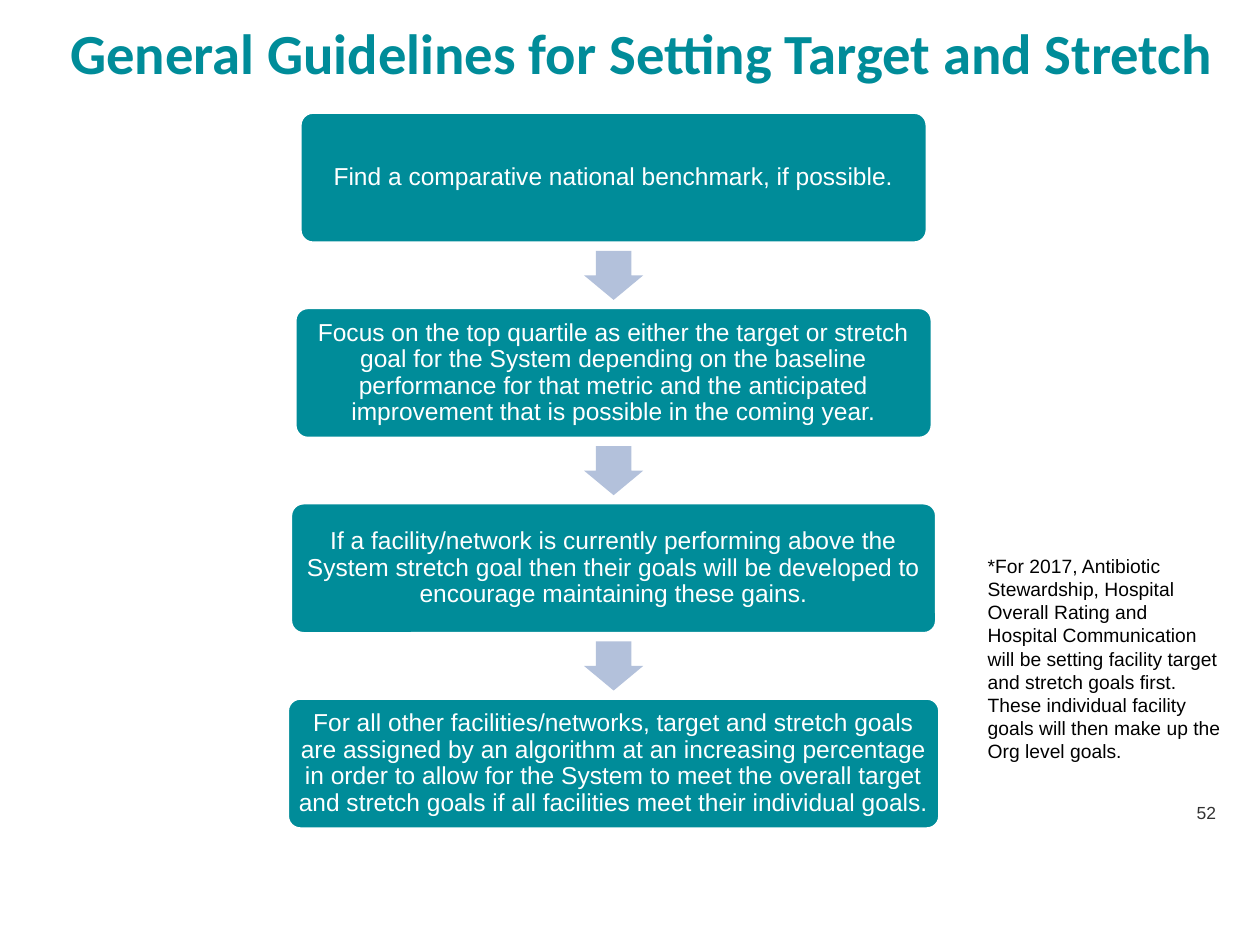
import dataclasses

import pptx
import pptx.dml.color
import pptx.enum.shapes
import pptx.enum.text
import pptx.util

Inches = pptx.util.Inches
Shape = pptx.enum.shapes.MSO_SHAPE
Align = pptx.enum.text.PP_ALIGN
Anchor = pptx.enum.text.MSO_ANCHOR


@dataclasses.dataclass(frozen=True)
class Theme:
    teal: str = "008C99"
    arrow: str = "B3C1DB"
    white: str = "FFFFFF"
    black: str = "000000"
    grey: str = "333333"
    heading_font: str = "Calibri"
    body_font: str = "Arial"
    title_size: float = 32.4
    step_size: float = 14
    note_size: float = 11
    number_size: float = 10


THEME = Theme()

TITLE = "General Guidelines for Setting Target and Stretch"
STEPS = [
    (4.98, "Find a comparative national benchmark, if possible."),
    (5.06, "Focus on the top quartile as either the target or stretch goal for "
           "the System depending on the baseline performance for that metric and "
           "the anticipated improvement that is possible in the coming year."),
    (5.13, "If a facility/network is currently performing above the System stretch "
           "goal then their goals will be developed to encourage maintaining these "
           "gains."),
    (5.18, "For all other facilities/networks, target and stretch goals are assigned "
           "by an algorithm at an increasing percentage in order to allow for the "
           "System to meet the overall target and stretch goals if all facilities "
           "meet their individual goals."),
]
NOTE = ("*For 2017, Antibiotic Stewardship, Hospital Overall Rating and Hospital "
        "Communication will be setting facility target and stretch goals first. "
        "These individual facility goals will then make up the Org level goals.")

FLOW_CENTER = 4.87
FLOW_TOP = 0.89
STEP_HEIGHT = 1.04
STEP_PITCH = 1.55
ARROW_LENGTH = 0.39
ARROW_BREADTH = 0.47


def rgb(color):
    return pptx.dml.color.RGBColor.from_string(color)


def write(frame, text, color, align=Align.LEFT, **font_format):
    frame.word_wrap = True
    paragraph = frame.paragraphs[0]
    paragraph.text = text
    paragraph.alignment = align
    for name, value in font_format.items():
        setattr(paragraph.font, name, value)
    paragraph.font.color.rgb = rgb(color)
    return paragraph


def add_text(slide, left, top, width, height, text, color, **text_format):
    box = slide.shapes.add_textbox(*map(Inches, (left, top, width, height)))
    write(box.text_frame, text, color, **text_format)


def add_filled(slide, preset, left, top, width, height, color, adjustments):
    shape = slide.shapes.add_shape(preset, *map(Inches, (left, top, width, height)))
    shape.shadow.inherit = False
    shape.fill.solid()
    shape.fill.fore_color.rgb = rgb(color)
    for index, value in enumerate(adjustments):
        shape.adjustments[index] = value
    return shape


def add_step(slide, top, width, text):
    step = add_filled(slide, Shape.ROUNDED_RECTANGLE, FLOW_CENTER - width / 2, top,
                      width, STEP_HEIGHT, THEME.teal, [0.1])
    step.line.color.rgb = rgb(THEME.white)
    step.line.width = pptx.util.Pt(2)
    frame = step.text_frame
    frame.vertical_anchor = Anchor.MIDDLE
    for side in ("left", "right", "top", "bottom"):
        setattr(frame, f"margin_{side}", Inches(0.05))
    paragraph = write(frame, text, THEME.white, Align.CENTER, name=THEME.body_font,
                      size=pptx.util.Pt(THEME.step_size))
    paragraph.line_spacing = 0.9


def add_down_arrow(slide, middle):
    arrow = add_filled(slide, Shape.RIGHT_ARROW, FLOW_CENTER - ARROW_LENGTH / 2,
                       middle - ARROW_BREADTH / 2, ARROW_LENGTH, ARROW_BREADTH,
                       THEME.arrow, [0.6, 0.5])
    arrow.rotation = 90
    arrow.line.fill.background()


def add_flow(slide):
    for index, (width, text) in enumerate(STEPS):
        top = FLOW_TOP + index * STEP_PITCH
        if index:
            add_down_arrow(slide, top - (STEP_PITCH - STEP_HEIGHT) / 2)
        add_step(slide, top, width, text)


def main():
    deck = pptx.Presentation()
    deck.slide_width, deck.slide_height = Inches(10), Inches(7.5)
    slide = deck.slides.add_slide(deck.slide_layouts[6])
    add_text(slide, 8.58, 6.32, 1.17, 0.23, "52", THEME.grey, align=Align.RIGHT,
             name=THEME.body_font, size=pptx.util.Pt(THEME.number_size))
    add_flow(slide)
    add_text(slide, 0.46, 0.09, 9.54, 0.67, TITLE, THEME.teal, bold=True,
             name=THEME.heading_font, size=pptx.util.Pt(THEME.title_size))
    add_text(slide, 7.74, 4.35, 2.05, 1.95, NOTE, THEME.black,
             name=THEME.body_font, size=pptx.util.Pt(THEME.note_size))
    deck.save("out.pptx")


if __name__ == "__main__":
    main()
